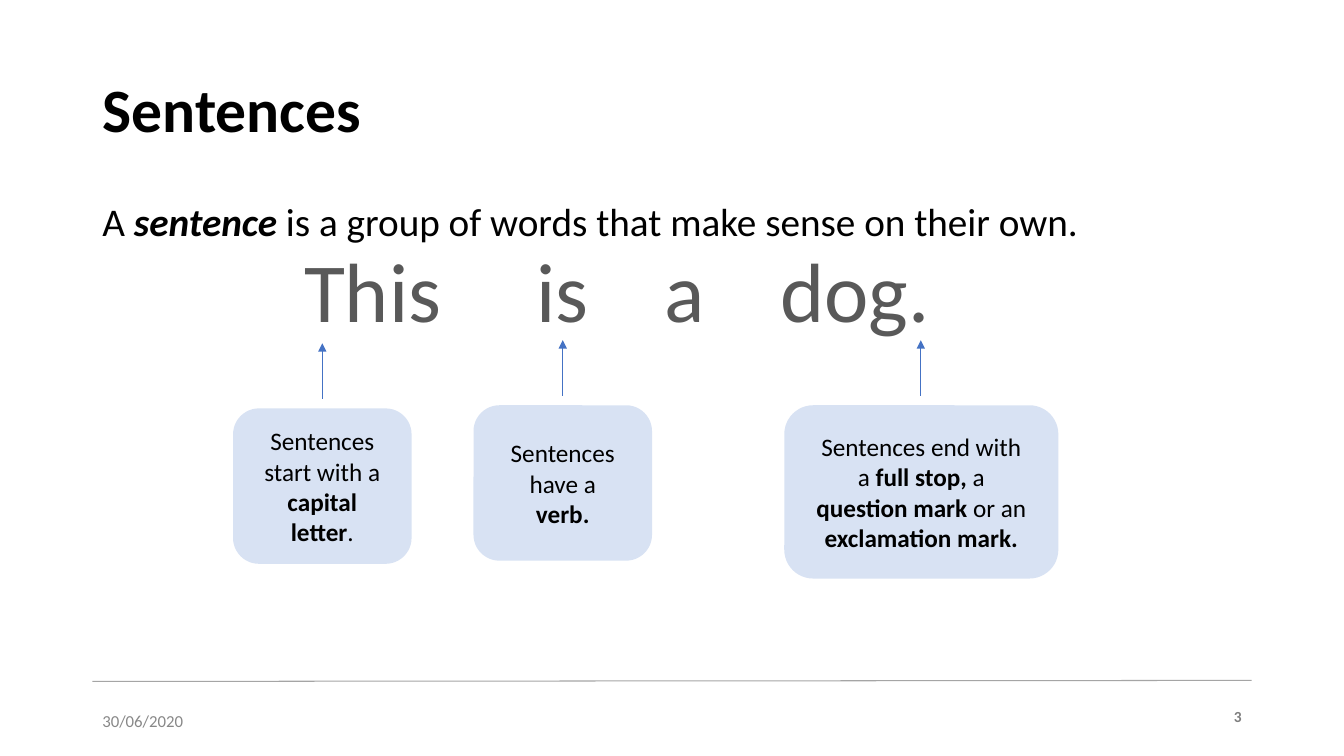
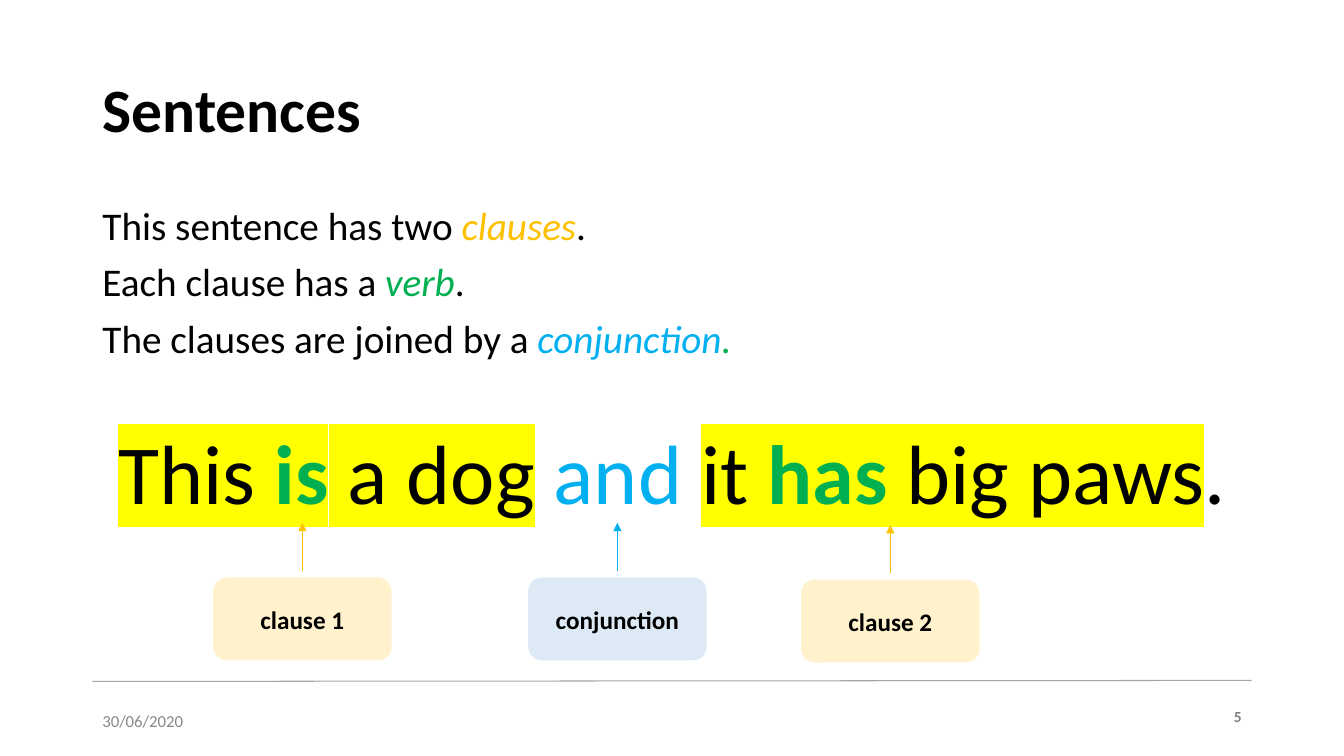
import pptx
import pptx.util
import pptx.dml.color
import pptx.enum.shapes
import pptx.enum.text
import pptx.oxml
import pptx.oxml.ns

PX = 9525
FONT = "Calibri"
COLORS = {
    "black": "000000", "example": "595959", "date": "888888", "number": "7F7F7F",
    "rule": "A5A5A5", "blue": "4472C4", "pale blue": "D8E2F3", "sky": "00B0F0",
    "pale sky": "DDEAF6", "gold": "FFC000", "pale gold": "FFF2CC",
    "green": "00B050", "yellow": "FFFF00",
}
# Extra character spacing in hundredths of a point
SPACING = {"w": 4068, "x": 5424}
LEFT = pptx.enum.text.PP_ALIGN.LEFT
CENTER = pptx.enum.text.PP_ALIGN.CENTER
RIGHT = pptx.enum.text.PP_ALIGN.RIGHT
MIDDLE = pptx.enum.text.MSO_ANCHOR.MIDDLE
TOP = pptx.enum.text.MSO_ANCHOR.TOP


def write_runs(paragraph, runs, size, align=LEFT):
    """Add (text, colour, flags) runs.

    Flags: b bold, i italic, h highlight, w wide spacing, x extra wide spacing.
    """
    paragraph.alignment = align
    for text, color, flags in runs:
        run = paragraph.add_run()
        run.text = text
        run.font.name = FONT
        run.font.size = pptx.util.Pt(size)
        run.font.bold = "b" in flags
        run.font.italic = "i" in flags
        run.font.color.rgb = pptx.dml.color.RGBColor.from_string(COLORS[color])
        if flags in SPACING:
            run.font._rPr.set("spc", str(SPACING[flags]))
        if "h" in flags:
            highlight = pptx.oxml.parse_xml(
                f'<a:highlight {pptx.oxml.ns.nsdecls("a")}>'
                f'<a:srgbClr val="{COLORS["yellow"]}"/></a:highlight>')
            run.font._rPr.find(pptx.oxml.ns.qn("a:solidFill")).addnext(highlight)


def add_line(slide, x1, y1, x2, y2, color, arrow=False):
    line = slide.shapes.add_connector(
        pptx.enum.shapes.MSO_CONNECTOR.STRAIGHT, x1 * PX, y1 * PX, x2 * PX, y2 * PX)
    line.line.color.rgb = pptx.dml.color.RGBColor.from_string(COLORS[color])
    line.line.width = pptx.util.Pt(0.75)
    if arrow:
        line.line._get_or_add_ln().append(pptx.oxml.parse_xml(
            f'<a:tailEnd {pptx.oxml.ns.nsdecls("a")} type="triangle"/>'))
    line._element.spPr.append(pptx.oxml.parse_xml(
        f'<a:effectLst {pptx.oxml.ns.nsdecls("a")}/>'))


# Paragraph: runs, size, alignment, space before, left indent
# Box: left, top, width, height, side inset, fill, arrow colour, runs
SLIDES = [
    {
        "number": "3", "body height": 139, "line spacing": 0.8,
        "arrow gap": 9, "arrow length": 53,
        "body": [
            ([("A ", "black", ""), ("sentence", "black", "bi"),
              (" is a group of words that make sense on their own.", "black", "")],
             28, LEFT, 0, 0),
            ([("This", "example", ""), (" ", "example", "x"), ("is", "example", ""),
              (" ", "example", "w"), ("a", "example", ""), (" ", "example", "w"),
              ("dog.", "example", "")], 60, LEFT, 10, 192),
        ],
        "boxes": [
            (222, 389, 170, 148, 14, "pale blue", "blue",
             [("Sentences start with a ", "black", ""), ("capital letter", "black", "b"),
              (".", "black", "")]),
            (451, 386, 170, 148, 25, "pale blue", "blue",
             [("Sentences have a ", "black", ""), ("verb.", "black", "b")]),
            (747, 386, 261, 165, 20, "pale blue", "blue",
             [("Sentences end with a ", "black", ""), ("full stop, ", "black", "b"),
              ("a ", "black", ""), ("question mark ", "black", "b"),
              ("or an ", "black", ""), ("exclamation mark.", "black", "b")]),
        ],
    },
    {
        "number": "5", "body height": 457, "line spacing": 0.9,
        "arrow gap": 6, "arrow length": 46,
        "body": [
            ([("This sentence has two ", "black", ""), ("clauses", "gold", "i"),
              (".", "black", "")], 28, LEFT, 0, 0),
            ([("Each clause has a ", "black", ""), ("verb", "green", "i"),
              (".", "black", "")], 28, LEFT, 10, 0),
            ([("The clauses are joined by a ", "black", ""), ("conjunction", "sky", "i"),
              (".", "green", "i")], 28, LEFT, 10, 0),
            ([("This ", "black", "h"), ("is", "green", "bh"), (" a dog", "black", "h"),
              (" and ", "sky", ""), ("it ", "black", "h"), ("has", "green", "bh"),
              (" big paws", "black", "h"), (".", "black", "")], 60, CENTER, 50, 0),
        ],
        "boxes": [
            (203, 550, 170, 79, 14, "pale gold", "gold", [("clause 1", "black", "b")]),
            (503, 550, 170, 79, 14, "pale sky", "sky", [("conjunction", "black", "b")]),
            (763, 552, 170, 79, 14, "pale gold", "gold", [("clause 2", "black", "b")]),
        ],
    },
]

presentation = pptx.Presentation()
presentation.slide_width = 1280 * PX
presentation.slide_height = 720 * PX

for content in SLIDES:
    slide = presentation.slides.add_slide(presentation.slide_layouts[1])
    title = slide.shapes.title
    body = slide.placeholders[1]
    for placeholder, top, height, anchor in (
            (title, 38, 139, MIDDLE), (body, 192, content["body height"], TOP)):
        placeholder.left, placeholder.top = 88 * PX, top * PX
        placeholder.width, placeholder.height = 1104 * PX, height * PX
        placeholder.text_frame.auto_size = pptx.enum.text.MSO_AUTO_SIZE.NONE
        placeholder.text_frame.vertical_anchor = anchor

    heading = title.text_frame.paragraphs[0]
    heading.line_spacing = 0.9
    write_runs(heading, [("Sentences", "black", "b")], 44)

    for index, (runs, size, align, space, indent) in enumerate(content["body"]):
        frame = body.text_frame
        paragraph = frame.add_paragraph() if index else frame.paragraphs[0]
        properties = paragraph._p.get_or_add_pPr()
        properties.set("marL", str(indent * PX))
        properties.set("indent", "0")
        properties.append(pptx.oxml.parse_xml(
            f'<a:buNone {pptx.oxml.ns.nsdecls("a")}/>'))
        paragraph.line_spacing = content["line spacing"]
        paragraph.space_before = pptx.util.Pt(space)
        write_runs(paragraph, runs, size, align)

    for left, top, width, height, inset, fill, arrow_color, runs in content["boxes"]:
        box = slide.shapes.add_shape(
            pptx.enum.shapes.MSO_SHAPE.ROUNDED_RECTANGLE,
            left * PX, top * PX, width * PX, height * PX)
        box.shadow.inherit = False
        box.fill.solid()
        box.fill.fore_color.rgb = pptx.dml.color.RGBColor.from_string(COLORS[fill])
        box.line.fill.background()
        box.text_frame.word_wrap = True
        box.text_frame.vertical_anchor = MIDDLE
        box.text_frame.margin_left = box.text_frame.margin_right = inset * PX
        write_runs(box.text_frame.paragraphs[0], runs, 18, CENTER)
        middle = left + width // 2
        start = top - content["arrow gap"]
        add_line(slide, middle, start, middle, start - content["arrow length"],
                 arrow_color, arrow=True)

    add_line(slide, 88, 649, 1192, 648, "rule")
    for left, top, width, height, text, color, flags, size, align, anchor in (
            (88, 667, 288, 38, "30/06/2020", "date", "", 12, LEFT, MIDDLE),
            (1155, 669, 37, 28, content["number"], "number", "b", 11, RIGHT, TOP)):
        footer = slide.shapes.add_textbox(left * PX, top * PX, width * PX, height * PX)
        footer.text_frame.word_wrap = True
        footer.text_frame.vertical_anchor = anchor
        write_runs(footer.text_frame.paragraphs[0], [(text, color, flags)], size, align)

presentation.save("out.pptx")
